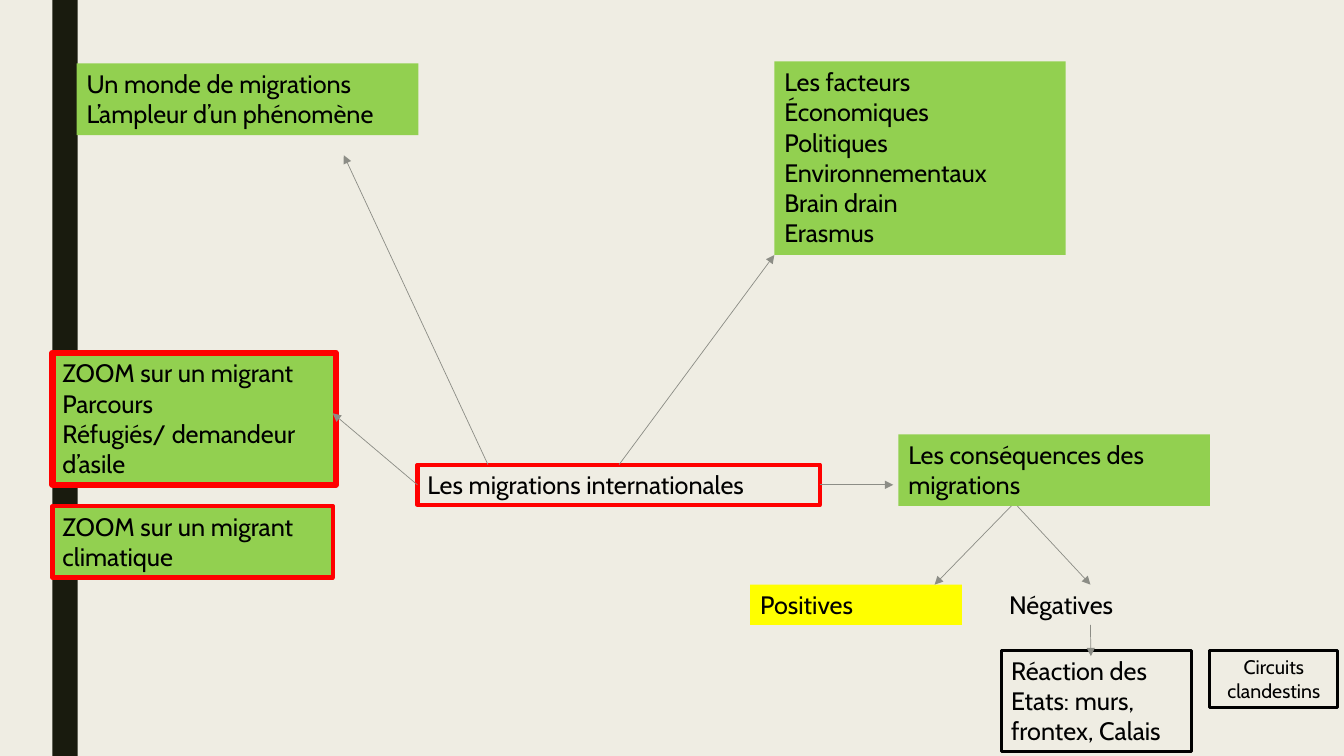
from dataclasses import dataclass

from lxml.etree import SubElement
from pptx import Presentation
from pptx.dml.color import RGBColor
from pptx.enum.shapes import MSO_CONNECTOR, MSO_SHAPE
from pptx.enum.text import MSO_AUTO_SIZE, PP_ALIGN
from pptx.oxml.ns import qn
from pptx.util import Inches, Pt


@dataclass(frozen=True)
class Theme:
    font: str = "Cabin"
    body: float = 18
    small: float = 14
    background: str = "EFEDE3"
    sidebar: str = "191B0E"
    text: str = "000000"
    topic: str = "92D050"
    positive: str = "FFFF00"
    focus: str = "FF0000"
    outline: str = "000000"
    arrow: str = "8C8D86"
    arrow_width: float = 0.5


THEME = Theme()
BOTTOM, LEFT, RIGHT, TOP = 2, 1, 3, 0


def rgb(value):
    return RGBColor.from_string(value)


def add_label(slide, box, lines, fill=None, line=None, width=0,
              size=THEME.body, align=PP_ALIGN.LEFT):
    """Place a text box with one paragraph per line."""
    label = slide.shapes.add_textbox(*map(Inches, box))
    frame = label.text_frame
    frame.text = "\n".join(lines)
    frame.word_wrap = True
    frame.auto_size = MSO_AUTO_SIZE.SHAPE_TO_FIT_TEXT
    for paragraph in frame.paragraphs:
        paragraph.alignment = align
        for run in paragraph.runs:
            run.font.name = THEME.font
            run.font.size = Pt(size)
            run.font.color.rgb = rgb(THEME.text)
    if fill:
        label.fill.solid()
        label.fill.fore_color.rgb = rgb(fill)
    if line:
        label.line.color.rgb = rgb(line)
        label.line.width = Pt(width)
    return label


def add_arrow(slide, start, end, source=None, target=None):
    """Draw an arrow; source and target are optional (shape, side) joins."""
    arrow = slide.shapes.add_connector(
        MSO_CONNECTOR.STRAIGHT, *map(Inches, (*start, *end)))
    if source:
        arrow.begin_connect(*source)
    if target:
        arrow.end_connect(*target)
    arrow.line.color.rgb = rgb(THEME.arrow)
    arrow.line.width = Pt(THEME.arrow_width)
    SubElement(arrow.line._get_or_add_ln(), qn("a:tailEnd"), type="triangle")
    SubElement(arrow._element.spPr, qn("a:effectLst"))


def add_sidebar(slide, box):
    bar = slide.shapes.add_shape(MSO_SHAPE.RECTANGLE, *map(Inches, box))
    bar.shadow.inherit = False
    bar.fill.solid()
    bar.fill.fore_color.rgb = rgb(THEME.sidebar)
    bar.line.fill.background()


def add_overview(slide, box):
    """Scale of migration on the left, its factors on the right."""
    left, top, width, height = box
    add_label(slide, (left, top + 0.02, 3.39, 0.71),
              ["Un monde de migrations", "L’ampleur d’un phénomène"],
              THEME.topic)
    add_label(slide, (left + width - 2.89, top, 2.89, height),
              ["Les facteurs", "Économiques", "Politiques",
               "Environnementaux", "Brain drain", "Erasmus"], THEME.topic)


def add_zooms(slide, box):
    """Two case studies, stacked."""
    left, top, width, height = box
    add_label(slide, (left, top, width, 1.31),
              ["ZOOM sur un migrant", "Parcours",
               "Réfugiés/ demandeur d’asile"],
              THEME.topic, THEME.focus, 4.5)
    add_label(slide, (left, top + height - 0.71, width - 0.03, 0.71),
              ["ZOOM sur un migrant climatique"],
              THEME.topic, THEME.focus, 3)


def add_consequences(slide, box):
    """Consequences, split into positive and negative, then reactions."""
    left, top, width, height = box
    branch_top = top + 1.49
    reaction_top = top + 2.14
    add_label(slide, (left + 1.47, top, 3.09, 0.71),
              ["Les conséquences des migrations"], THEME.topic)
    add_label(slide, (left, branch_top, 2.1, 0.4), ["Positives"],
              THEME.positive)
    negatives = add_label(slide, (left + 2.47, branch_top, 1.81, 0.4),
                          ["Négatives"], THEME.background)
    add_label(slide, (left + 2.49, reaction_top, 1.89, height - 2.14),
              ["Réaction des Etats: murs, frontex, Calais"],
              THEME.background, THEME.outline, 2.25)
    add_label(slide, (left + width - 1.27, reaction_top, 1.27, 0.57),
              ["Circuits clandestins"], line=THEME.outline, width=2.25,
              size=THEME.small, align=PP_ALIGN.CENTER)

    fork = top + 0.71
    stem = left + 3.38
    add_arrow(slide, (left + 2.59, fork), (left + 1.83, branch_top))
    add_arrow(slide, (left + 2.65, fork), (stem, branch_top),
              target=(negatives, TOP))
    add_arrow(slide, (stem, branch_top + 0.4), (stem, reaction_top + 0.06),
              source=(negatives, BOTTOM))


def add_central_topic(slide, box):
    """Central topic and the arrows that lead from it to each theme."""
    left, top, width, height = box
    topic = add_label(slide, box, ["Les migrations internationales"],
                      line=THEME.focus, width=3)
    middle = top + height / 2
    right = left + width
    add_arrow(slide, (left, middle), (left - 0.84, top - 0.51),
              source=(topic, LEFT))
    add_arrow(slide, (left + 0.7, top), (left - 0.73, top - 3.07))
    add_arrow(slide, (left + 2, top), (left + 3.54, top - 2.08))
    add_arrow(slide, (right, middle), (right + 0.73, middle),
              source=(topic, RIGHT))


def main():
    deck = Presentation()
    deck.slide_width = Inches(13.33)
    deck.slide_height = Inches(7.5)
    slide = deck.slides.add_slide(deck.slide_layouts[6])
    slide.background.fill.solid()
    slide.background.fill.fore_color.rgb = rgb(THEME.background)

    add_sidebar(slide, (0.52, 0, 0.25, 7.5))
    add_overview(slide, (0.76, 0.61, 9.81, 1.92))
    add_zooms(slide, (0.52, 3.5, 2.81, 2.23))
    add_consequences(slide, (7.44, 4.31, 5.83, 3.15))
    add_central_topic(slide, (4.14, 4.61, 3.99, 0.4))
    deck.save("out.pptx")


if __name__ == "__main__":
    main()
